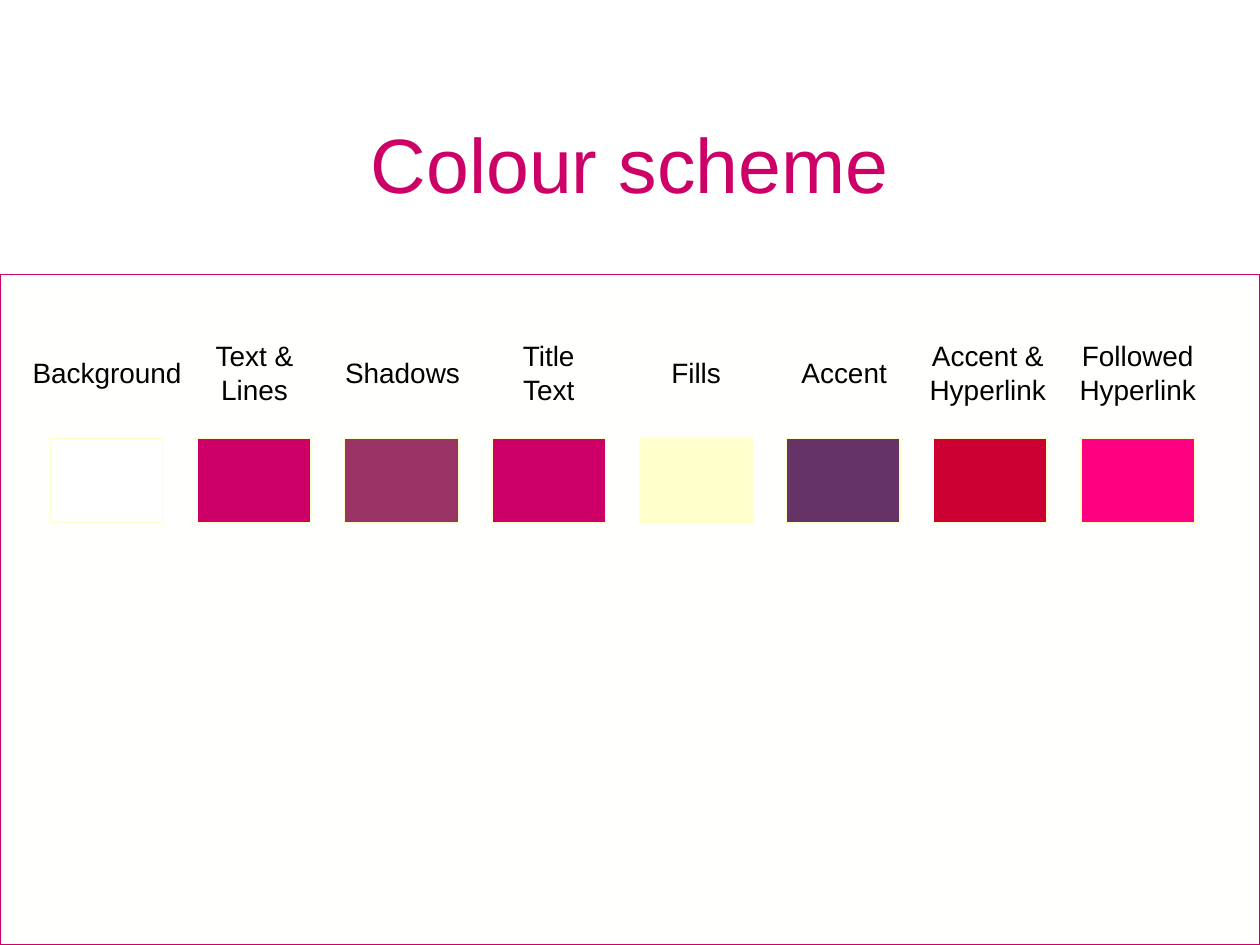
from pptx import Presentation
from pptx.dml.color import RGBColor
from pptx.enum.shapes import MSO_SHAPE
from pptx.enum.text import MSO_ANCHOR, MSO_AUTO_SIZE, PP_ALIGN
from pptx.util import Inches, Pt

RECT = MSO_SHAPE.RECTANGLE
MIDDLE = MSO_ANCHOR.MIDDLE
GROW = MSO_AUTO_SIZE.SHAPE_TO_FIT_TEXT
NO_FIT = MSO_AUTO_SIZE.NONE
CENTER = PP_ALIGN.CENTER


def paint(color, hue):
    color.rgb = RGBColor.from_string(hue)


def add_rect(left, top, width, height, fill, line):
    rect = slide.shapes.add_shape(
        RECT, Inches(left), Inches(top), Inches(width), Inches(height))
    rect.shadow.inherit = False
    rect.fill.solid()
    paint(rect.fill.fore_color, fill)
    paint(rect.line.color, line)
    rect.line.width = Pt(0.75)


deck = Presentation()
deck.slide_width, deck.slide_height = Inches(10), Inches(7.5)
slide = deck.slides.add_slide(deck.slide_layouts[5])
slide.background.fill.solid()
paint(slide.background.fill.fore_color, "FFFFFF")

# Title
title = slide.shapes.title
title.left, title.top = Inches(0.75), Inches(0.67)
title.width, title.height = Inches(8.5), Inches(1.25)
frame = title.text_frame
frame.text = "Colour scheme"
frame.vertical_anchor = MIDDLE
frame.auto_size = NO_FIT
para = frame.paragraphs[0]
para.alignment = CENTER
para.font.name, para.font.size = "Arial", Pt(44)
paint(para.font.color, "CC0066")

# Panel
add_rect(0, 2.18, 10, 5.32, "FFFFFE", "CC0066")

# Swatches with labels above them: label, its left and width, fill
swatches = [
    ("Background", 0.15, 1.4, "FFFFFF"),
    ("Text &\nLines", 1.6, 0.84, "CC0066"),
    ("Shadows", 2.63, 1.13, "993366"),
    ("Title\vText", 4.03, 0.65, "CC0066"),
    ("Fills", 5.22, 0.61, "FFFFCC"),
    ("Accent", 6.25, 0.9, "663366"),
    ("Accent &\nHyperlink", 7.27, 1.14, "CC0033"),
    ("Followed\nHyperlink", 8.46, 1.14, "FF0180"),
]
first, last = 0.4, 8.58
pitch = (last - first) / (len(swatches) - 1)
for i, (label, left, width, fill) in enumerate(swatches):
    add_rect(first + i * pitch, 3.48, 0.9, 0.67, fill, "FFFFCC")

    height = 0.64 if len(label.splitlines()) > 1 else 0.37
    box = slide.shapes.add_textbox(
        Inches(left), Inches(2.96 - height / 2),
        Inches(width), Inches(height))
    frame = box.text_frame
    frame.word_wrap = False
    frame.auto_size = GROW
    frame.text = label
    for para in frame.paragraphs:
        para.alignment = CENTER
        para.font.name, para.font.size = "Arial", Pt(16)
        paint(para.font.color, "000000")

deck.save("out.pptx")
